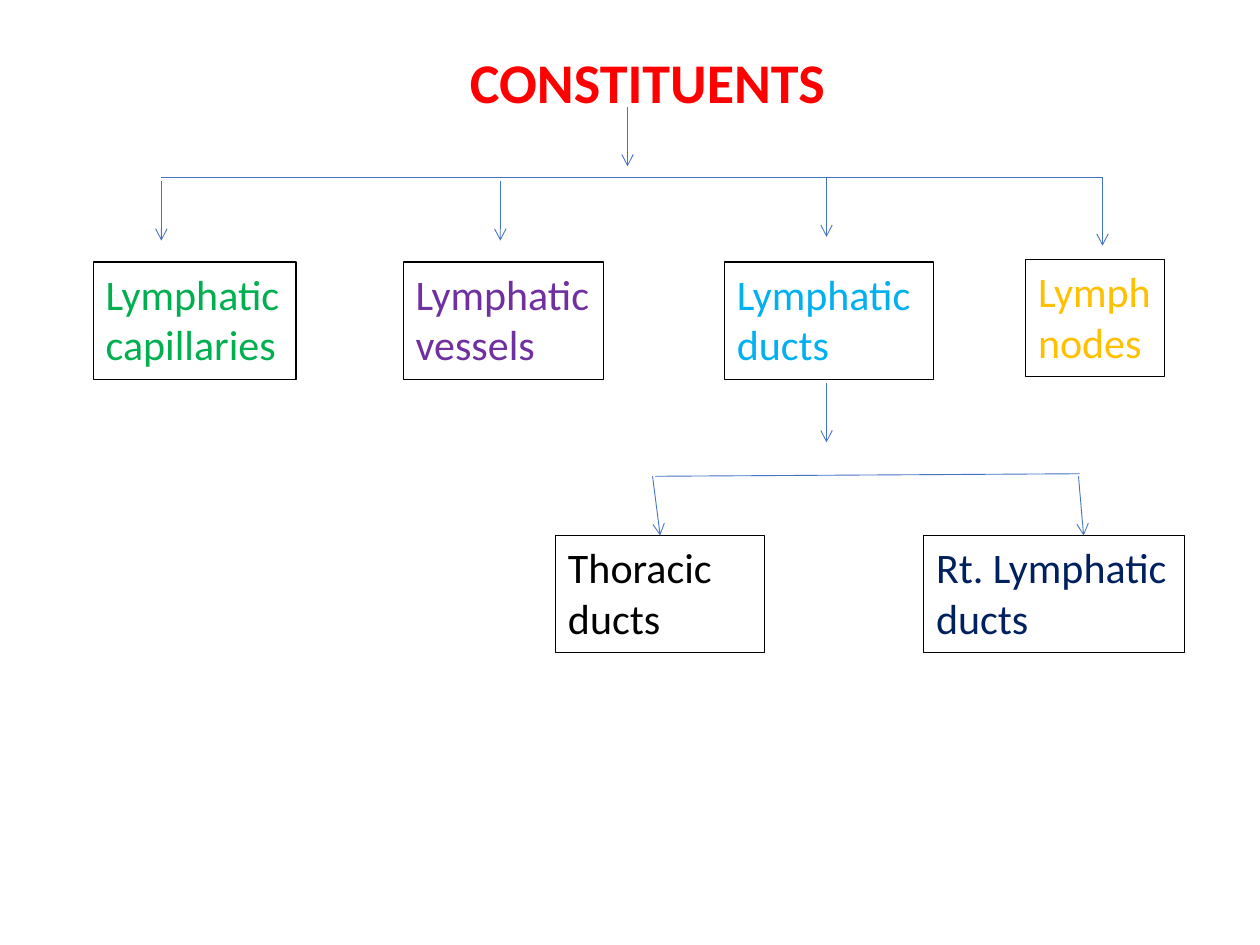
import pptx
import pptx.util
import pptx.dml.color
import pptx.enum.shapes
import pptx.enum.text
import pptx.oxml.ns
import lxml.etree

Pt = pptx.util.Pt
ARROW_LENGTH = 33.84
BOX_HEIGHT = 67


def color(value):
    return pptx.dml.color.RGBColor.from_string(value)


def add_line(slide, start, end, arrow=False):
    connector = slide.shapes.add_connector(
        pptx.enum.shapes.MSO_CONNECTOR.STRAIGHT, *map(Pt, (*start, *end)))
    connector.line.color.rgb = color("4472C4")
    connector.line.width = Pt(0.5)
    properties = connector._element.spPr
    if arrow:
        line = properties.find(pptx.oxml.ns.qn("a:ln"))
        lxml.etree.SubElement(line, pptx.oxml.ns.qn("a:tailEnd"), type="arrow")
    lxml.etree.SubElement(properties, pptx.oxml.ns.qn("a:effectLst"))
    return connector


def add_label(slide, left, top, width, text, text_color):
    shape = slide.shapes.add_shape(
        pptx.enum.shapes.MSO_SHAPE.RECTANGLE,
        Pt(left), Pt(top), Pt(width), Pt(BOX_HEIGHT))
    shape.shadow.inherit = False
    shape.fill.solid()
    shape.fill.fore_color.rgb = color("FFFFFF")
    shape.line.color.rgb = color("000000")
    shape.line.width = Pt(0.75)
    frame = shape.text_frame
    frame.word_wrap = True
    frame.vertical_anchor = pptx.enum.text.MSO_ANCHOR.TOP
    paragraph = frame.paragraphs[0]
    paragraph.text = text
    paragraph.alignment = pptx.enum.text.PP_ALIGN.LEFT
    paragraph.font.name = "Calibri"
    paragraph.font.size = Pt(24)
    paragraph.font.color.rgb = color(text_color)
    return shape


def draw_title(slide, left, top, width, height):
    title = slide.shapes.add_textbox(Pt(left), Pt(top), Pt(width), Pt(height))
    frame = title.text_frame
    frame.word_wrap = True
    frame.vertical_anchor = pptx.enum.text.MSO_ANCHOR.MIDDLE
    paragraph = frame.paragraphs[0]
    paragraph.text = "CONSTITUENTS"
    paragraph.line_spacing = 0.9
    paragraph.font.name = "Calibri"
    paragraph.font.size = Pt(32)
    paragraph.font.bold = True
    paragraph.font.color.rgb = color("FF0000")
    stem_x, stem_y = left + 97.2, top + 36
    add_line(slide, (stem_x, stem_y), (stem_x, stem_y + ARROW_LENGTH), arrow=True)


def draw_constituents(slide, left, top, width, height):
    constituents = [
        ("Lymphatic capillaries", "00B050", 0, 48.24, 115.9, 38.9, 2.16, 36),
        ("Lymphatic vessels", "7030A0", 177.1, 48.24, 114.5, 232.6, 2.16, 36),
        ("Lymphatic ducts", "00B0F0", 360.7, 48.24, 119.5, 419, 0, ARROW_LENGTH),
        ("Lymph nodes", "FFC000", 532.8, 46.8, 79.2, 576.7, 0, 38.9),
    ]
    add_line(slide, (left + 38.9, top), (left + 576.7, top))
    for text, text_color, box_x, box_y, box_width, arrow_x, start, end in constituents:
        add_label(slide, left + box_x, top + box_y, box_width, text, text_color)
        add_line(slide, (left + arrow_x, top + start),
                 (left + arrow_x, top + end), arrow=True)


def draw_duct_branches(slide, left, top, width, height):
    box_top = top + height - BOX_HEIGHT
    fork_y = box_top - ARROW_LENGTH
    add_line(slide, (left + 154.8, top), (left + 154.8, top + ARROW_LENGTH), arrow=True)
    add_line(slide, (left + 56.9, fork_y), (left + 299.5, fork_y - 1.44))
    thoracic = add_label(slide, left, box_top, 119.5, "Thoracic ducts", "000000")
    add_label(slide, left + width - 149, box_top, 149, "Rt. Lymphatic ducts", "002060")
    thoracic_arrow = add_line(slide, (left + 55.4, fork_y),
                              (left + 59.75, box_top), arrow=True)
    thoracic_arrow.end_connect(thoracic, 0)
    add_line(slide, (left + 298.8, fork_y), (left + 301.7, box_top), arrow=True)


def main():
    presentation = pptx.Presentation()
    presentation.slide_width = Pt(720)
    presentation.slide_height = Pt(540)
    slide = presentation.slides.add_slide(presentation.slide_layouts[6])
    draw_title(slide, 261.4, 25.2, 223.2, 46.8)
    draw_constituents(slide, 53.3, 101.5, 612, 115.2)
    draw_duct_branches(slide, 317.5, 218.9, 359.3, 154.1)
    presentation.save("out.pptx")


if __name__ == "__main__":
    main()
